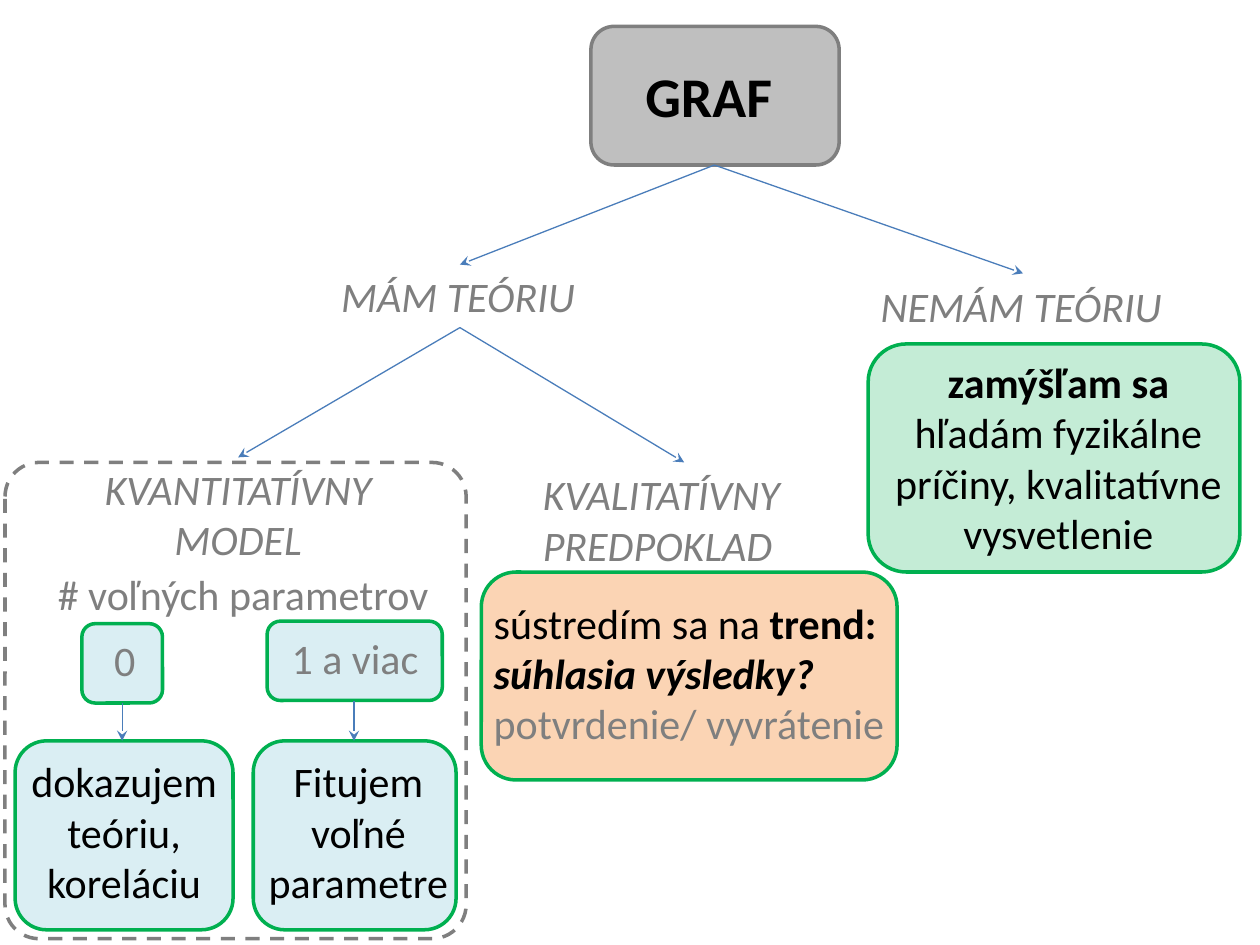
from lxml.etree import SubElement
from pptx import Presentation
from pptx.dml.color import RGBColor
from pptx.enum.dml import MSO_LINE
from pptx.enum.shapes import MSO_CONNECTOR, MSO_SHAPE
from pptx.enum.text import MSO_ANCHOR, PP_ALIGN
from pptx.oxml.ns import qn
from pptx.util import Pt

PX = 9144  # EMU per px, 100 px to the inch
FONT = "Calibri"
COLORS = {
    "black": "000000", "gray": "7F7F7F", "silver": "BFBFBF",
    "green": "00B050", "peach": "FBD4B4", "ice": "DAEEF3", "arrow": "4A7DBA",
}
CENTER, LEFT = PP_ALIGN.CENTER, PP_ALIGN.LEFT


def rgb(name):
    return RGBColor.from_string(COLORS[name])


def emu(*lengths):
    return [length * PX for length in lengths]


def add_panel(slide, box, fill=None, line="green", corner=0.167, alpha=None):
    panel = slide.shapes.add_shape(MSO_SHAPE.ROUNDED_RECTANGLE, *emu(*box))
    panel.shadow.inherit = False
    panel.adjustments[0] = corner
    panel.line.color.rgb = rgb(line)
    panel.line.width = Pt(2)
    if fill is None:
        panel.fill.background()
        return panel
    panel.fill.solid()
    panel.fill.fore_color.rgb = rgb(fill)
    if alpha:
        color = panel._element.spPr.find(qn("a:solidFill"))[0]
        SubElement(color, qn("a:alpha"), val=str(alpha * 1000))
    return panel


def write(frame, paragraphs, align=CENTER, size=24):
    """Each paragraph is a list of (text, color, bold, italic)."""
    frame.word_wrap = True
    frame.vertical_anchor = MSO_ANCHOR.TOP
    for number, pieces in enumerate(paragraphs):
        paragraph = frame.add_paragraph() if number else frame.paragraphs[0]
        paragraph.alignment = align
        for words, color, bold, italic in pieces:
            run = paragraph.add_run()
            run.text = words
            run.font.name, run.font.size = FONT, Pt(size)
            run.font.bold, run.font.italic = bold, italic
            run.font.color.rgb = rgb(color)


def add_text(slide, box, paragraphs, align=CENTER):
    text = slide.shapes.add_textbox(*emu(*box))
    write(text.text_frame, paragraphs, align)


def add_label(slide, box, words, align=LEFT, italic=True):
    add_text(slide, box, [[(words, "gray", False, italic)]], align)


def add_arrow(slide, start, end):
    arrow = slide.shapes.add_connector(MSO_CONNECTOR.STRAIGHT, *emu(*start, *end))
    arrow.line.color.rgb = rgb("arrow")
    arrow.line.width = Pt(0.75)
    SubElement(arrow.line._get_or_add_ln(), qn("a:tailEnd"), type="stealth")
    SubElement(arrow._element.spPr, qn("a:effectLst"))


def draw_root(slide, left, top, width, height):
    add_panel(slide, (left, top, width, height), "silver", "gray")
    title = slide.shapes.title
    title.left, title.top, title.width, title.height = emu(left, top + 23, width - 10, 64)
    write(title.text_frame, [[("GRAF", "black", True, False)]], size=32)
    # Bring the title in front of its panel
    title._element.getparent().append(title._element)


def draw_no_theory(slide, left, top, width, height):
    add_label(slide, (left, top, 246, 50), "NEMÁM TEÓRIU")
    add_panel(slide, (left, top + 55, width, height - 55), "green", alpha=23)
    add_text(slide, (left + 7, top + 60, width - 7, 172), [
        [("zamýšľam sa", "black", True, False)],
        [("hľadám fyzikálne príčiny, kvalitatívne vysvetlenie", "black", False, False)],
    ])


def draw_qualitative(slide, left, top, width, height):
    add_panel(slide, (left, top + 87, width, height - 87), "peach")
    add_label(slide, (left + 39, top, 244, 91), "KVALITATÍVNY PREDPOKLAD")
    add_text(slide, (left, top + 102, width + 9, 131), [
        [("sústredím sa na ", "black", False, False), ("trend:", "black", True, False)],
        [("súhlasia výsledky?", "black", True, True)],
        [("potvrdenie/ vyvrátenie", "gray", False, False)],
    ], LEFT)


def draw_quantitative(slide, left, top, width, height):
    add_label(slide, (left + 63, top - 4, 244, 91), "KVANTITATÍVNY MODEL", CENTER)
    add_label(slide, (left - 4, top + 79, 386, 50), "# voľných parametrov", CENTER, False)
    frame = add_panel(slide, (left, top, width, height), line="gray", corner=0.074)
    frame.line.dash_style = MSO_LINE.DASH

    # Parameter count: left, top, width, text shift; outcome: left, width, text left, text width
    cases = [
        ("0", 61, 128, 64, 2, "dokazujem teóriu, koreláciu", 8, 173, 8, 173),
        ("1 a viac ", 208, 126, 139, 4, "Fitujem voľné parametre", 197, 161, 184, 193),
    ]
    for count, x, y, w, shift, outcome, out_x, out_w, text_x, text_w in cases:
        add_panel(slide, (left + x, top + y, w, 63), "ice")
        add_label(slide, (left + x + shift, top + y + 4, w, 50), count, CENTER, False)
        add_panel(slide, (left + out_x, top + 221, out_w, 150), "ice")
        add_text(slide, (left + text_x, top + 228, text_w, 131),
                 [[(outcome, "black", False, False)]])
        middle = left + x + w // 2
        add_arrow(slide, (middle, top + y + 63), (middle, top + 221))


def draw_arrows(slide):
    root, theory = (567, 131), (365, 260)
    for start, end in [(root, (365, 210)), (root, (812, 217)),
                       (theory, (543, 367)), (theory, (189, 363))]:
        add_arrow(slide, start, end)


def main():
    deck = Presentation()
    deck.slide_width, deck.slide_height = emu(1000, 750)
    slide = deck.slides.add_slide(deck.slide_layouts[5])  # Title Only

    draw_qualitative(slide, 382, 367, 330, 252)
    draw_root(slide, 469, 21, 197, 110)
    add_label(slide, (261, 210, 208, 50), "MÁM TEÓRIU")
    draw_no_theory(slide, 689, 218, 295, 236)
    draw_quantitative(slide, 4, 367, 366, 378)
    draw_arrows(slide)
    deck.save("out.pptx")


if __name__ == "__main__":
    main()
